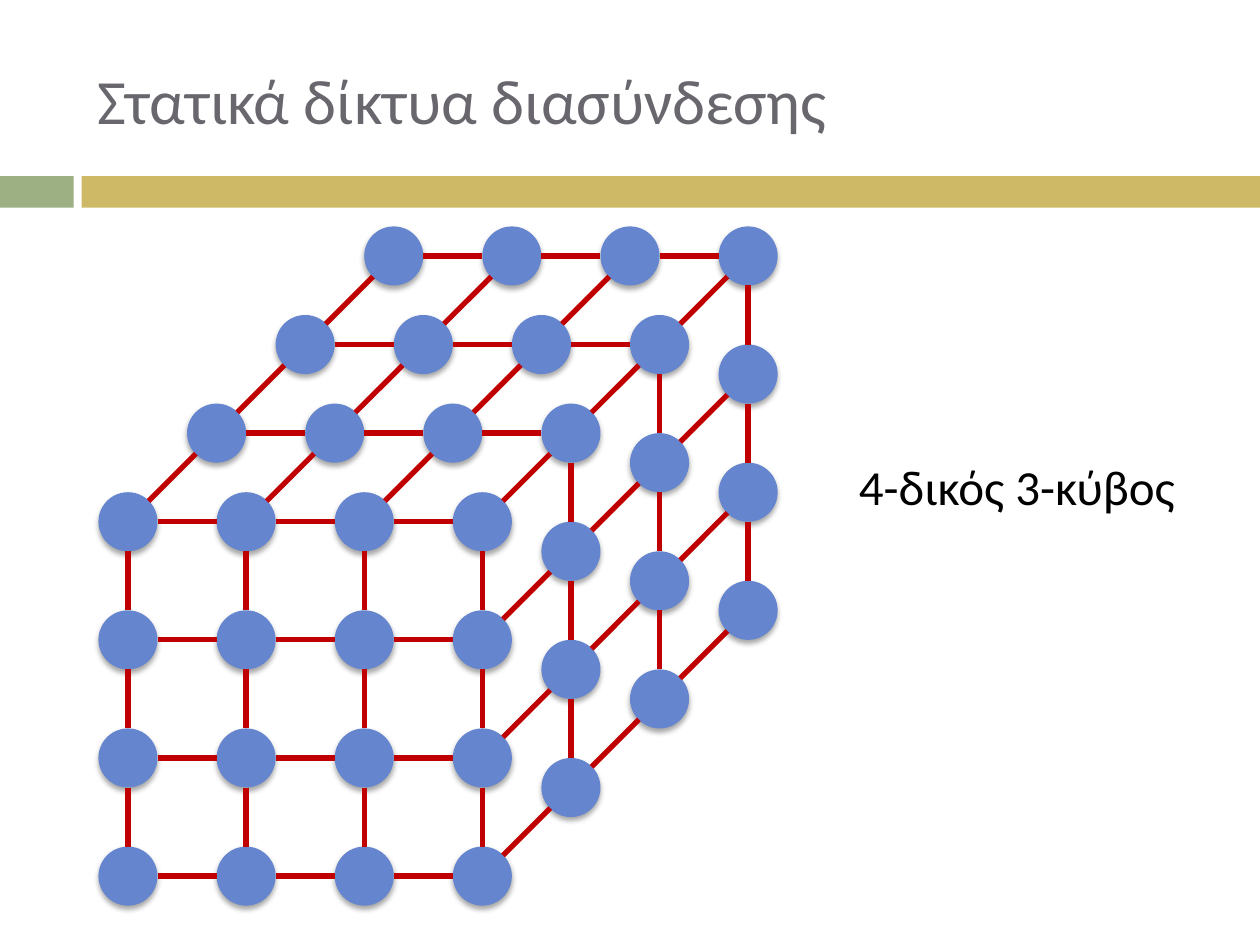
"""Builds a slide that shows a 4-ary 3-cube network."""
import itertools

import pptx
import pptx.dml.color
import pptx.enum.shapes
import pptx.enum.text
import pptx.oxml
import pptx.oxml.ns
import pptx.util

SCALE = 914400 / 128
THEME = {
    "font": "Calibri", "title": 36, "label": 28, "edge": 3,
    "green": "9CB084", "gold": "CEB966", "grey": "69676D",
    "black": "000000", "blue": "6585CF", "red": "C00000",
}
SHADOW = (
    '<a:outerShdw %s blurRad="38100" dist="25400" dir="5400000" rotWithShape="0">'
    '<a:srgbClr val="000000"><a:alpha val="35000"/></a:srgbClr></a:outerShdw>'
) % pptx.oxml.ns.nsdecls("a")

SIZE = 4
LEFT, TOP = 100, 500
NODE, STEP, DEPTH = 60, 120, 90
HALF, SLANT = 30, 21

deck = pptx.Presentation()
deck.slide_width, deck.slide_height = pptx.util.Inches(10), pptx.util.Inches(7.5)
slide = deck.slides.add_slide(deck.slide_layouts[6])
shapes = slide.shapes


def emu(*sizes):
    return [pptx.util.Emu(round(size * SCALE)) for size in sizes]


def write(text, box, size, color, anchor):
    frame = shapes.add_textbox(*emu(*box)).text_frame
    frame.word_wrap = True
    frame.vertical_anchor = anchor
    run = frame.paragraphs[0].add_run()
    run.text = text
    run.font.name = THEME["font"]
    run.font.size = pptx.util.Pt(THEME[size])
    run.font.color.rgb = pptx.dml.color.RGBColor.from_string(THEME[color])


for left, width, color in [(0, 75, "green"), (83, 1197, "gold")]:
    bar = shapes.add_shape(
        pptx.enum.shapes.MSO_SHAPE.RECTANGLE, *emu(left, 179, width, 32))
    bar.shadow.inherit = False
    bar.fill.solid()
    bar.fill.fore_color.rgb = pptx.dml.color.RGBColor.from_string(THEME[color])
    bar.line.fill.background()

write("Στατικά δίκτυα διασύνδεσης", box=(86, 32, 1142, 138), size="title",
      color="grey", anchor=pptx.enum.text.MSO_ANCHOR.MIDDLE)

nodes = {}
for back, row, col in itertools.product(range(SIZE), repeat=3):
    if back == 0 or row == 0 or col == SIZE - 1:
        nodes[col, row, back] = (LEFT + HALF + STEP * col + DEPTH * back,
                                 TOP + HALF + STEP * row - DEPTH * back)

for x, y in nodes.values():
    node = shapes.add_shape(
        pptx.enum.shapes.MSO_SHAPE.OVAL, *emu(x - HALF, y - HALF, NODE, NODE))
    node.fill.solid()
    node.fill.fore_color.rgb = pptx.dml.color.RGBColor.from_string(THEME["blue"])
    node.line.fill.background()
    node.shadow.inherit = False
    effects = node.element.spPr.find(pptx.oxml.ns.qn("a:effectLst"))
    effects.append(pptx.oxml.parse_xml(SHADOW))

links = [((1, 0, 0), (HALF, 0)), ((0, 1, 0), (0, HALF)), ((0, 0, 1), (SLANT, -SLANT))]
for place, (x, y) in nodes.items():
    for move, (dx, dy) in links:
        other = tuple(a + b for a, b in zip(place, move))
        if other not in nodes:
            continue
        endx, endy = nodes[other]
        edge = shapes.add_connector(
            pptx.enum.shapes.MSO_CONNECTOR.STRAIGHT,
            *emu(x + dx, y + dy, endx - dx, endy - dy))
        edge.line.width = pptx.util.Pt(THEME["edge"])
        edge.line.color.rgb = pptx.dml.color.RGBColor.from_string(THEME["red"])
        edge.element.spPr.append(pptx.oxml.parse_xml(
            "<a:effectLst %s/>" % pptx.oxml.ns.nsdecls("a")))

write("4-δικός 3-κύβος", box=(860, 457, 370, 73), size="label",
      color="black", anchor=pptx.enum.text.MSO_ANCHOR.TOP)

deck.save("out.pptx")
